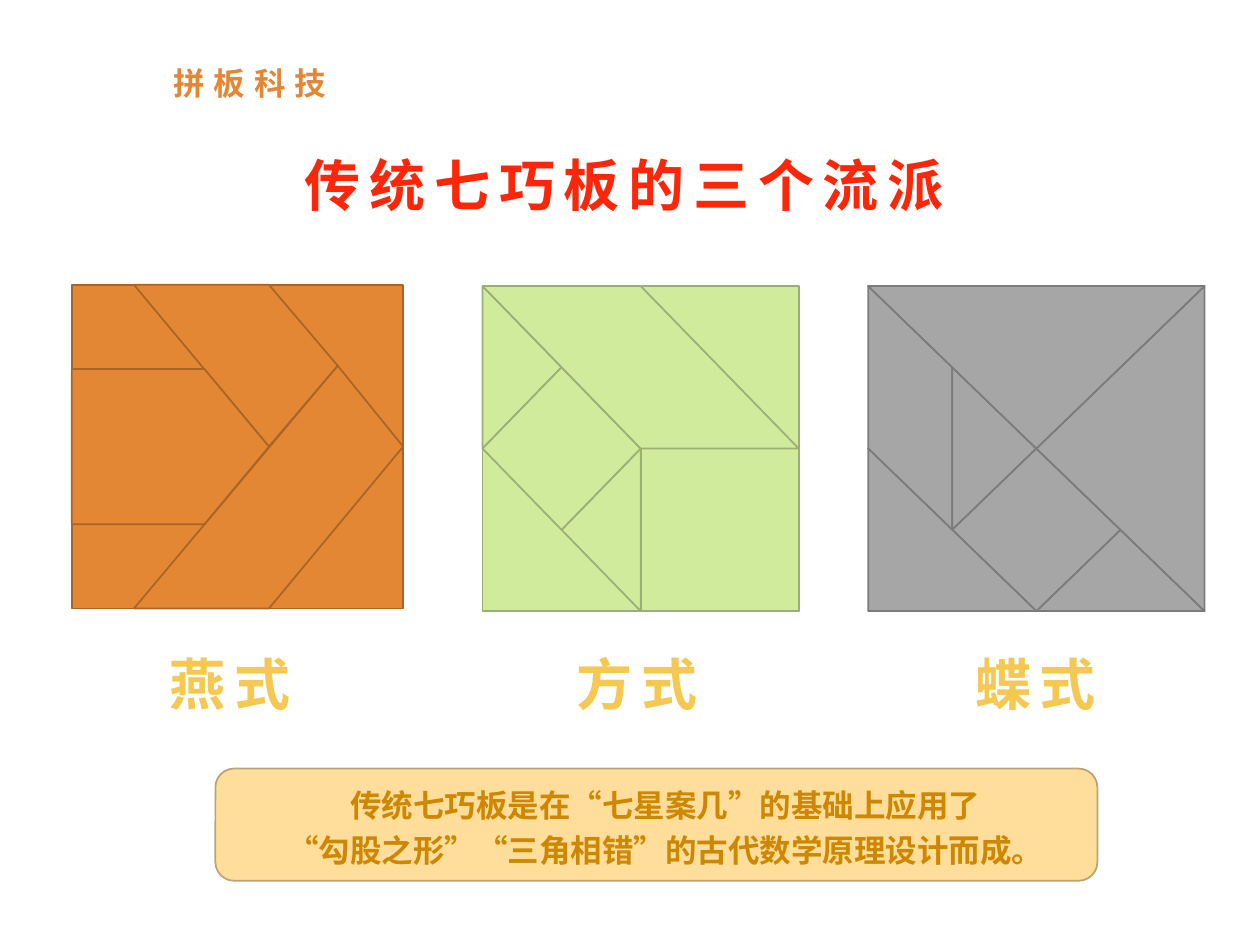
from lxml import etree
from pptx import Presentation
from pptx.dml.color import RGBColor
from pptx.enum.shapes import MSO_SHAPE
from pptx.enum.text import MSO_ANCHOR, PP_ALIGN
from pptx.oxml.ns import qn
from pptx.util import Inches, Pt

RECTANGLE = MSO_SHAPE.RECTANGLE
ROUNDED = MSO_SHAPE.ROUNDED_RECTANGLE
MIDDLE, TOP = MSO_ANCHOR.MIDDLE, MSO_ANCHOR.TOP
LEFT, CENTER = PP_ALIGN.LEFT, PP_ALIGN.CENTER
CHINESE_FONT = "Noto Sans CJK SC"
GRID_STEPS = 4

SWALLOW_PIECES = [
    [(0, 0), (4, 4)],
    [(0.75, 4), (3.21, 1), (4, 2), (2.38, 4)],
    [(2.38, 0), (3.21, 1), (2.38, 2), (0.75, 0)],
    [(0, 1.04), (1.6, 1.04), (2.38, 2), (1.6, 2.96), (0, 2.96)],
]
SQUARE_PIECES = [
    [(0, 0), (4, 4)],
    [(0, 2), (0, 0), (1, 1)],
    [(2, 2), (2, 4), (1, 3)],
    [(2, 2), (4, 4)],
    [(0, 2), (1, 1), (2, 2), (1, 3)],
    [(2, 0), (4, 2), (2, 2), (0, 0)],
]
BUTTERFLY_PIECES = [
    [(0, 0), (1, 1), (1, 3), (0, 2)],
    [(1, 3), (1, 1), (2, 2)],
    [(4, 4), (2, 4), (3, 3)],
    [(1, 3), (2, 2), (3, 3), (2, 4)],
    [(4, 0), (4, 4), (2, 2)],
    [(0, 0), (4, 0), (2, 2)],
    [(0, 2), (2, 4), (0, 4)],
]
TANGRAMS = [
    ((0.57, 2.26, 2.63, 2.57), "E48734", "A96426", SWALLOW_PIECES),
    ((3.83, 2.27, 2.51, 2.58), "D1EB9D", "9BAE74", SQUARE_PIECES),
    ((6.89, 2.27, 2.67, 2.58), "A6A6A6", "7B7B7B", BUTTERFLY_PIECES),
]
STYLE_LABELS = [("燕式", 1.25), ("方式", 4.48), ("蝶式", 7.64)]
SUMMARY = [
    "传统七巧板是在“七星案几”的基础上应用了",
    "“勾股之形”“三角相错”的古代数学原理设计而成。",
]


def color(value):
    return RGBColor.from_string(value)


def paint(shape, fill, line):
    shape.shadow.inherit = False
    shape.fill.solid()
    shape.fill.fore_color.rgb = color(fill)
    shape.line.color.rgb = color(line)
    shape.line.width = Pt(1)


def style_paragraph(paragraph, size, text_color, font_name, spacing):
    font = paragraph.font
    font.name = font_name
    font.size = Pt(size)
    font.bold = True
    font.color.rgb = color(text_color)
    font._element.set("spc", str(spacing * 100))
    east_asian = etree.Element(qn("a:ea"), typeface=CHINESE_FONT)
    font._element.find(qn("a:latin")).addnext(east_asian)


def write_heading(box, text, size, text_color):
    frame = box.text_frame
    frame.text = text
    frame.word_wrap = False
    frame.vertical_anchor = MIDDLE
    paragraph = frame.paragraphs[0]
    paragraph.alignment = LEFT
    style_paragraph(paragraph, size, text_color, CHINESE_FONT, 5)


def add_heading(slide, area, text, size, text_color):
    box = slide.shapes.add_textbox(*map(Inches, area))
    write_heading(box, text, size, text_color)


def set_title(slide, area, text, size, text_color):
    title = slide.shapes.title
    title.left, title.top, title.width, title.height = map(Inches, area)
    write_heading(title, text, size, text_color)


def add_piece(group, corners):
    if len(corners) == 2:
        (left, top), (right, bottom) = corners
        return group.shapes.add_shape(RECTANGLE, left, top, right - left, bottom - top)
    builder = group.shapes.build_freeform(*corners[0])
    builder.add_line_segments(corners[1:], close=True)
    return builder.convert_to_shape()


def add_tangram(slide, area, fill, line, pieces):
    left, top, width, height = area
    group = slide.shapes.add_group_shape()
    for piece in pieces:
        corners = [
            (Inches(left + width * column / GRID_STEPS), Inches(top + height * row / GRID_STEPS))
            for column, row in piece
        ]
        paint(add_piece(group, corners), fill, line)


def add_summary(slide, area, lines):
    box = slide.shapes.add_textbox(*map(Inches, area))
    frame = box.text_frame
    frame.word_wrap = True
    frame.vertical_anchor = TOP
    frame.text = "\n".join(lines)
    for paragraph in frame.paragraphs:
        paragraph.alignment = CENTER
        paragraph.line_spacing = 1.2
        style_paragraph(paragraph, 18, "CD8700", "Comic Neue", 0)


def main():
    deck = Presentation()
    deck.slide_width, deck.slide_height = Inches(10), Inches(7.5)
    slide = deck.slides.add_slide(deck.slide_layouts[5])

    add_heading(slide, (1.28, 0.46, 1.48, 0.4), "拼板科技", 18, "E48734")
    set_title(slide, (2.32, 1.14, 5.36, 0.64), "传统七巧板的三个流派", 32, "FD2609")
    for area, fill, line, pieces in TANGRAMS:
        add_tangram(slide, area, fill, line, pieces)
    for text, left in STYLE_LABELS:
        add_heading(slide, (left, 5.1, 1.23, 0.64), text, 32, "F5C852")

    panel = slide.shapes.add_shape(ROUNDED, *map(Inches, (1.71, 6.1, 7, 0.89)))
    paint(panel, "FFDD9B", "BDA373")
    add_summary(slide, (1.69, 6.13, 7.18, 0.83), SUMMARY)

    deck.save("out.pptx")


if __name__ == "__main__":
    main()
